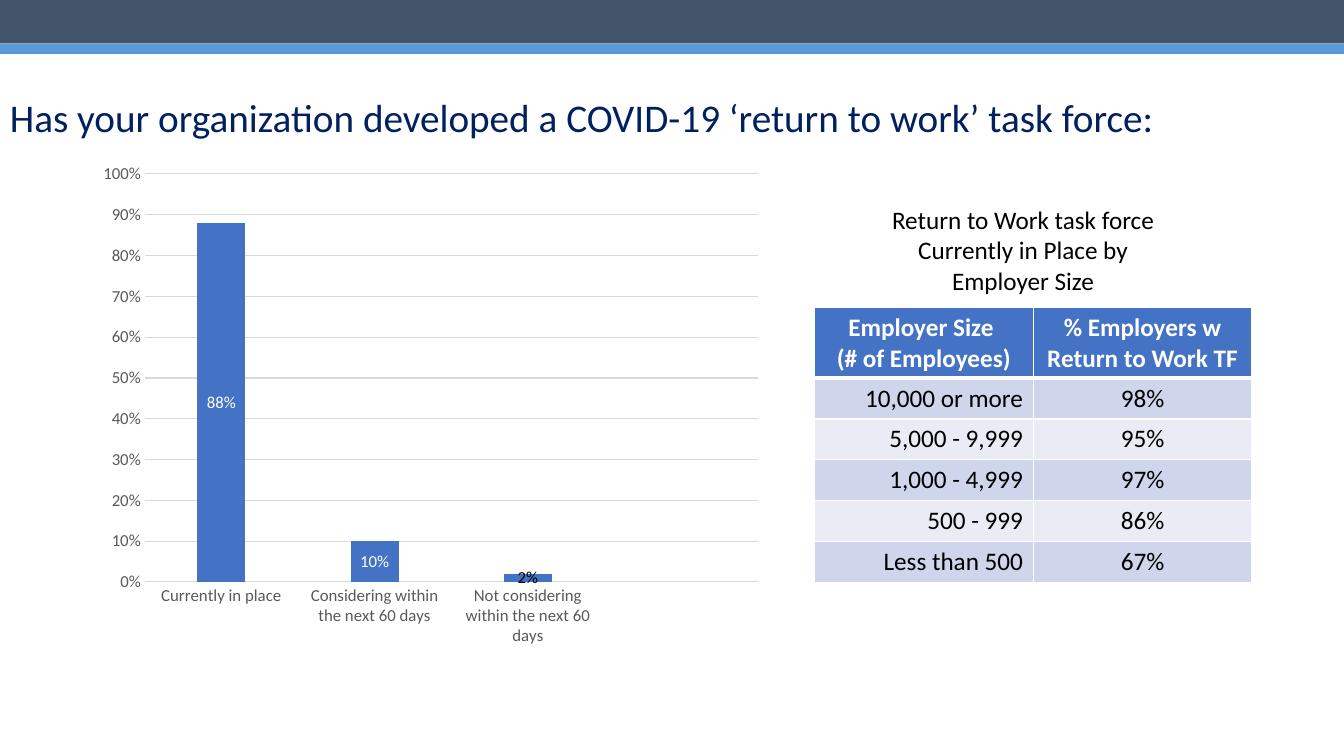
from dataclasses import dataclass

from lxml.etree import SubElement
from pptx import Presentation
from pptx.chart.data import CategoryChartData
from pptx.dml.color import RGBColor
from pptx.enum.chart import XL_CHART_TYPE, XL_LABEL_POSITION, XL_TICK_MARK
from pptx.enum.shapes import MSO_SHAPE
from pptx.enum.text import MSO_ANCHOR, PP_ALIGN
from pptx.oxml.ns import qn
from pptx.util import Pt


@dataclass(frozen=True)
class Theme:
    font: str = "Calibri"
    slate: str = "44546A"
    sky: str = "5B9BD5"
    navy: str = "002060"
    blue: str = "4472C4"
    band_dark: str = "CFD5EA"
    band_light: str = "E9EBF5"
    grid: str = "D9D9D9"
    axis: str = "595959"
    black: str = "000000"
    white: str = "FFFFFF"
    title_size: int = 28
    body_size: int = 18
    chart_size: int = 12


T = Theme()

ANSWERS = [
    ("Currently in place", 0.88),
    ("Considering within the next 60 days", 0.1),
    ("Not considering within the next 60 days", 0.02),
    ("", None),
]
HEADERS = ["Employer Size \n(# of Employees)", "% Employers w Return to Work TF"]
EMPLOYERS = [
    ("10,000 or more", "98%"),
    ("5,000 - 9,999", "95%"),
    ("1,000 - 4,999", "97%"),
    ("500 - 999", "86%"),
    ("Less than 500", "67%"),
]


def rgb(color):
    return RGBColor.from_string(color)


def style_font(font, size, color, bold=False):
    font.name, font.size, font.bold = T.font, Pt(size), bold
    font.color.rgb = rgb(color)


def write_text(tf, text, size=T.body_size, color=T.black, bold=False,
               align=PP_ALIGN.LEFT, line_spacing=None):
    tf.word_wrap = True
    for i, line in enumerate(text.split("\n")):
        p = tf.paragraphs[0] if i == 0 else tf.add_paragraph()
        p.alignment = align
        if line_spacing:
            p.line_spacing = line_spacing
        r = p.add_run()
        r.text = line
        style_font(r.font, size, color, bold)


def add_band(s, top, height, color):
    sp = s.shapes.add_shape(MSO_SHAPE.RECTANGLE, 0, Pt(top), Pt(960), Pt(height))
    sp.shadow.inherit = False
    sp.fill.solid()
    sp.fill.fore_color.rgb = rgb(color)
    sp.line.fill.background()


def add_text(s, left, top, width, height, text, anchor=MSO_ANCHOR.TOP, **fmt):
    sp = s.shapes.add_textbox(Pt(left), Pt(top), Pt(width), Pt(height))
    sp.text_frame.vertical_anchor = anchor
    write_text(sp.text_frame, text, **fmt)


def style_axis(axis):
    axis.major_tick_mark = axis.minor_tick_mark = XL_TICK_MARK.NONE
    style_font(axis.tick_labels.font, T.chart_size, T.axis)


def style_line(line):
    line.color.rgb = rgb(T.grid)
    line.width = Pt(0.75)


def add_answer_chart(s, left, top, width, height):
    data = CategoryChartData(number_format="0%")
    data.categories = [name for name, _ in ANSWERS]
    data.add_series("Series 1", [value for _, value in ANSWERS])
    chart = s.shapes.add_chart(XL_CHART_TYPE.COLUMN_CLUSTERED, Pt(left), Pt(top),
                               Pt(width), Pt(height), data).chart
    chart.has_title = chart.has_legend = False
    style_font(chart.font, T.chart_size, T.black)

    # Axes
    style_axis(chart.category_axis)
    style_line(chart.category_axis.format.line)
    values = chart.value_axis
    style_axis(values)
    values.minimum_scale, values.maximum_scale, values.major_unit = 0, 1, 0.1
    values.tick_labels.number_format = "0%"
    values.tick_labels.number_format_is_linked = False
    values.format.line.fill.background()
    style_line(values.major_gridlines.format.line)

    # Columns and their labels
    plot = chart.plots[0]
    plot.gap_width, plot.overlap, plot.vary_by_categories = 219, -27, False
    series = plot.series[0]
    series.format.fill.solid()
    series.format.fill.fore_color.rgb = rgb(T.blue)
    labels = series.data_labels
    labels.show_value = True
    labels.number_format, labels.number_format_is_linked = "0%", False
    labels.position = XL_LABEL_POSITION.CENTER
    style_font(labels.font, T.chart_size, T.white)
    small = series.points[2].data_label
    style_font(small.font, T.chart_size, T.black)
    small.position = XL_LABEL_POSITION.CENTER


def set_borders(cell, bottom):
    tc_pr = cell._tc.get_or_add_tcPr()
    widths = {"a:lnL": 1, "a:lnR": 1, "a:lnT": 1, "a:lnB": bottom}
    for tag, width in widths.items():
        ln = SubElement(tc_pr, qn(tag), w=str(Pt(width)))
        SubElement(SubElement(ln, qn("a:solidFill")), qn("a:srgbClr"), val=T.white)


def fill_cell(cell, text, fill, border_bottom=1, **fmt):
    set_borders(cell, border_bottom)
    cell.fill.solid()
    cell.fill.fore_color.rgb = rgb(fill)
    write_text(cell.text_frame, text, **fmt)


def add_size_table(s, left, top, col_width, header_height, row_height):
    rows = len(EMPLOYERS) + 1
    height = header_height + row_height * len(EMPLOYERS)
    table = s.shapes.add_table(rows, 2, Pt(left), Pt(top),
                               Pt(2 * col_width), Pt(height)).table
    for col in table.columns:
        col.width = Pt(col_width)
    for i, row in enumerate(table.rows):
        row.height = Pt(row_height if i else header_height)
    for c, text in enumerate(HEADERS):
        fill_cell(table.cell(0, c), text, T.blue, border_bottom=3,
                  color=T.white, bold=True, align=PP_ALIGN.CENTER)
    for i, employer in enumerate(EMPLOYERS):
        fill = T.band_light if i % 2 else T.band_dark
        for c, align in enumerate((PP_ALIGN.RIGHT, PP_ALIGN.CENTER)):
            fill_cell(table.cell(i + 1, c), employer[c], fill, align=align)


def main():
    prs = Presentation()
    prs.slide_width, prs.slide_height = Pt(960), Pt(540)
    s = prs.slides.add_slide(prs.slide_layouts[6])

    # Header bands
    add_band(s, 0, 31, T.slate)
    add_band(s, 31, 7.5, T.sky)

    # Question
    add_text(s, 0, 33, 945, 104.5,
             "Has your organization developed a COVID-19 ‘return to work’ task force:",
             anchor=MSO_ANCHOR.MIDDLE, size=T.title_size, color=T.navy,
             line_spacing=0.9)

    # Answers and breakdown by employer size
    add_answer_chart(s, 64, 110, 487, 358.5)
    add_size_table(s, 581.75, 219.6, 156.25, 50.4, 29.2)
    add_text(s, 625, 142.5, 211.5, 72.7,
             "Return to Work task force Currently in Place by Employer Size",
             align=PP_ALIGN.CENTER)

    prs.save("out.pptx")


if __name__ == "__main__":
    main()
